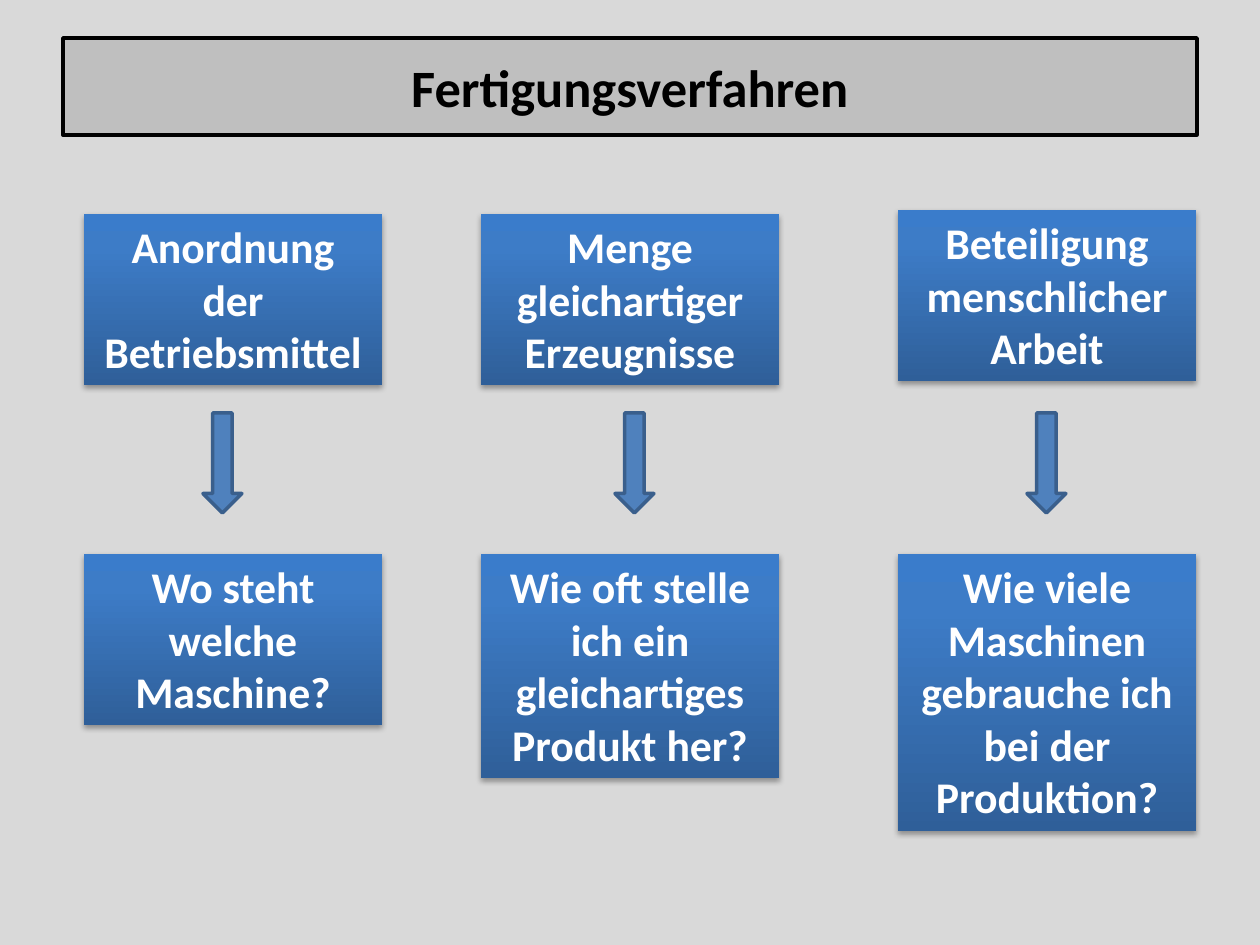
import copy

import lxml.etree
import pptx
import pptx.dml.color
import pptx.enum.shapes
import pptx.enum.text
import pptx.oxml
import pptx.oxml.ns
import pptx.util

SCALE = 914400 / 126
FONT = "Calibri"
COLORS = {
    "background": "D9D9D9",
    "title_fill": "BFBFBF",
    "black": "000000",
    "white": "FFFFFF",
    "box_dark": "2F5F99",
    "box_middle": "3D7CC7",
    "box_light": "3A7CCB",
    "arrow_fill": "4F81BD",
    "arrow_line": "3A5F8C",
}
BOX_STOPS = [(0, "box_dark"), (0.8, "box_middle"), (1, "box_light")]
BOX_WIDTH = 298
LINE_HEIGHT = 53
BOX_PADDING = 12
ARROW_WIDTH, ARROW_HEIGHT = 39, 100
ARROW_LEFT, ARROW_STEP, ARROW_TOP = 203, 412, 413
QUESTION_TOP = 554
COLUMNS = [
    (84, 214, "Anordnung der Betriebsmittel", "Wo steht welche Maschine?", 3),
    (481, 214, "Menge gleichartiger Erzeugnisse",
     "Wie oft stelle ich ein gleichartiges Produkt her?", 4),
    (898, 210, "Beteiligung menschlicher Arbeit",
     "Wie viele Maschinen gebrauche ich bei der Produktion?", 5),
]


def px(length):
    """Turn a length in px into EMU."""
    return pptx.util.Emu(round(length * SCALE))


def color(name):
    """Return the named colour."""
    return pptx.dml.color.RGBColor.from_string(COLORS[name])


def write_text(shape, text, size, font_color, anchor):
    """Write centred bold text into a shape."""
    frame = shape.text_frame
    frame.text = text
    frame.word_wrap = True
    frame.vertical_anchor = anchor
    paragraph = frame.paragraphs[0]
    paragraph.alignment = pptx.enum.text.PP_ALIGN.CENTER
    font = paragraph.runs[0].font
    font.name = FONT
    font.size = pptx.util.Pt(size)
    font.bold = True
    font.color.rgb = color(font_color)


def fill_and_outline(shape, fill, line):
    """Give a shape a solid fill and a two point outline."""
    shape.fill.solid()
    shape.fill.fore_color.rgb = color(fill)
    shape.line.color.rgb = color(line)
    shape.line.width = pptx.util.Pt(2)


def fill_gradient(shape):
    """Give a shape the upward three-stop blue gradient."""
    shape.fill.gradient()
    shape.fill.gradient_angle = 90
    stop_list = shape.element.spPr.find(".//" + pptx.oxml.ns.qn("a:gsLst"))
    stop_list.append(copy.deepcopy(stop_list[-1]))
    for stop, (position, name) in zip(shape.fill.gradient_stops, BOX_STOPS):
        stop.position = position
        stop.color.rgb = color(name)


def add_shadow(shape):
    """Give a shape a soft shadow below it."""
    shape.shadow.inherit = False
    effects = shape.element.spPr.find(pptx.oxml.ns.qn("a:effectLst"))
    shadow = lxml.etree.SubElement(
        effects, pptx.oxml.ns.qn("a:outerShdw"),
        blurRad=str(pptx.util.Pt(3.1)), dist=str(pptx.util.Pt(1.8)),
        dir="5400000", rotWithShape="0")
    shade = lxml.etree.SubElement(
        shadow, pptx.oxml.ns.qn("a:srgbClr"), val=COLORS["black"])
    lxml.etree.SubElement(shade, pptx.oxml.ns.qn("a:alpha"), val="35000")


def add_title(slide, left, top, width, height):
    """Place the framed title."""
    title = slide.shapes.title
    title.left, title.top = px(left), px(top)
    title.width, title.height = px(width), px(height)
    fill_and_outline(title, "title_fill", "black")
    write_text(title, "Fertigungsverfahren", size=30, font_color="black",
               anchor=pptx.enum.text.MSO_ANCHOR.MIDDLE)


def add_box(slide, left, top, text, line_count):
    """Place a blue box as tall as its lines of text."""
    height = line_count * LINE_HEIGHT + BOX_PADDING
    box = slide.shapes.add_shape(
        pptx.enum.shapes.MSO_SHAPE.RECTANGLE,
        px(left), px(top), px(BOX_WIDTH), px(height))
    fill_gradient(box)
    box.line.fill.background()
    add_shadow(box)
    write_text(box, text, size=25, font_color="white",
               anchor=pptx.enum.text.MSO_ANCHOR.TOP)
    box.text_frame.auto_size = pptx.enum.text.MSO_AUTO_SIZE.SHAPE_TO_FIT_TEXT


def add_arrow(slide, left, top):
    """Place a block arrow pointing down."""
    arrow = slide.shapes.add_shape(
        pptx.enum.shapes.MSO_SHAPE.DOWN_ARROW,
        px(left), px(top), px(ARROW_WIDTH), px(ARROW_HEIGHT))
    fill_and_outline(arrow, "arrow_fill", "arrow_line")
    arrow.shadow.inherit = False


def main():
    """Build the slide and save it."""
    presentation = pptx.Presentation()
    presentation.slide_width = px(1260)
    presentation.slide_height = px(945)
    slide = presentation.slides.add_slide(presentation.slide_layouts[5])
    slide.background.fill.solid()
    slide.background.fill.fore_color.rgb = color("background")
    add_title(slide, 63, 38, 1134, 97)
    for index, (left, top, topic, question, lines) in enumerate(COLUMNS):
        add_box(slide, left, top, topic, 3)
        add_arrow(slide, ARROW_LEFT + index * ARROW_STEP, ARROW_TOP)
        add_box(slide, left, QUESTION_TOP, question, lines)
    presentation.save("out.pptx")


if __name__ == "__main__":
    main()
